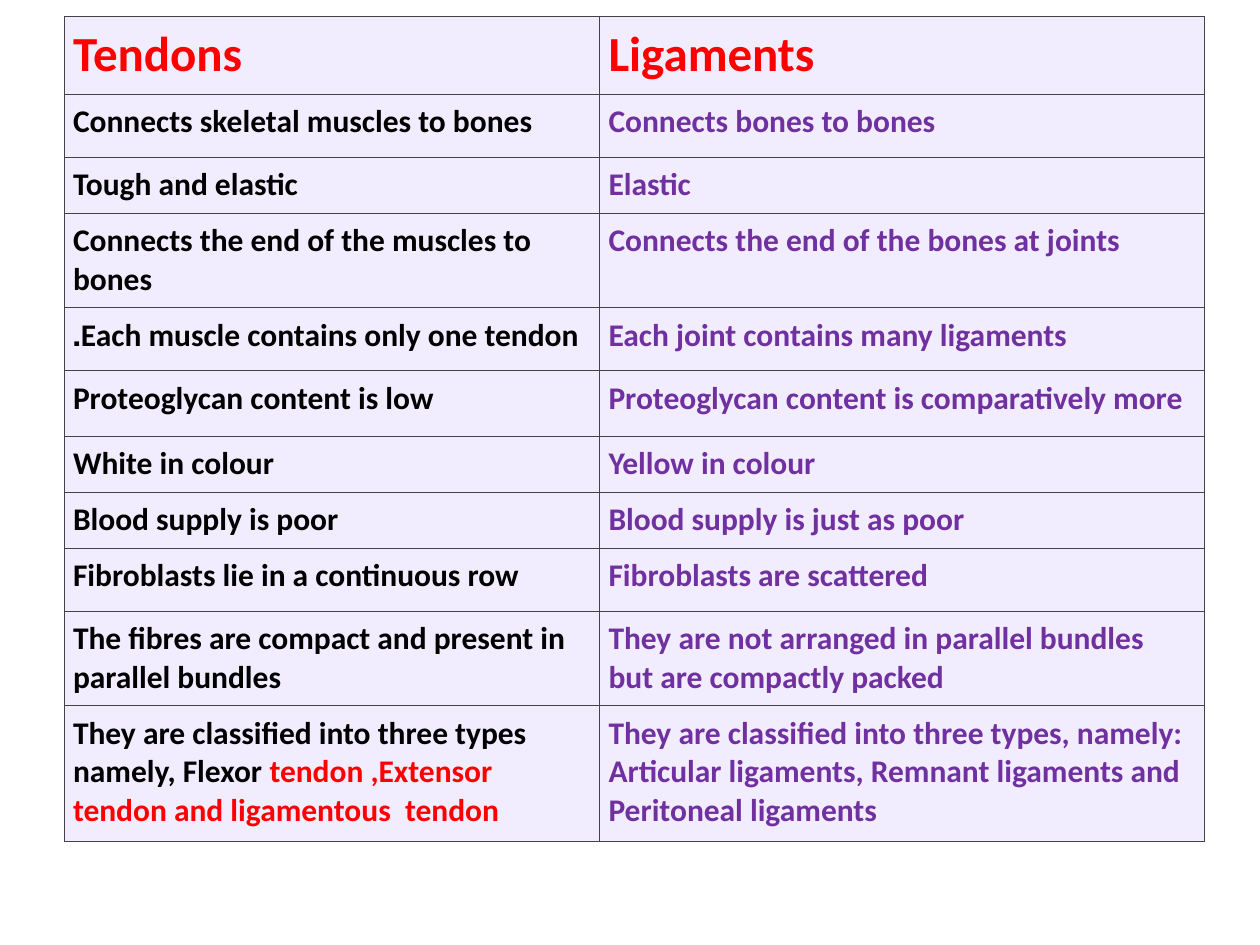
import pptx
import pptx.util
import pptx.dml.color
import pptx.enum.text
import pptx.oxml
import pptx.oxml.ns

Inches = pptx.util.Inches

COLORS = {
    "red": "FF0000",
    "black": "000000",
    "purple": "7030A0",
    "cell": "F1EDFF",
    "border": "444444",
}
FONT = "Calibri"

# Content: heading, then one (tendon, ligament) pair per row
HEADINGS = ("Tendons", "Ligaments")
COMPARISONS = [
    ("Connects skeletal muscles to bones", "Connects bones to bones"),
    ("Tough and elastic", "Elastic"),
    ("Connects the end of the muscles to bones", "Connects the end of the bones at joints"),
    ("Each muscle contains only one tendon.", "Each joint contains many ligaments"),
    ("Proteoglycan content is low", "Proteoglycan content is comparatively more"),
    ("White in colour", "Yellow in colour"),
    ("Blood supply is poor", "Blood supply is just as poor"),
    ("Fibroblasts lie in a continuous row", "Fibroblasts are scattered"),
    ("The fibres are compact and present in parallel bundles",
     "They are not arranged in parallel bundles but are compactly packed"),
]
# The last row reads left to right: paragraphs made of (text, color) runs
TENDON_TYPES = [
    [("They are classified into three types", "black")],
    [("namely, Flexor ", "black"),
     ("tendon ,Extensor tendon and ligamentous  tendon", "red")],
]
LIGAMENT_TYPES = [
    [("They are classified into three types, namely: Articular ligaments, "
      "Remnant ligaments and  Peritoneal ligaments", "purple")],
]

# Layout in inches
LEFT, TOP, WIDTH, HEIGHT = 0.51, 0.13, 9.06, 6.51
COLUMN_WIDTHS = [4.25, 4.8]
ROW_HEIGHTS = [0.32, 0.5, 0.32, 0.52, 0.5, 0.52, 0.32, 0.32, 0.5, 0.69, 1.08]
MARGIN = 0.07


def rgb(name):
    return pptx.dml.color.RGBColor.from_string(COLORS[name])


def add_borders(cell):
    properties = cell._tc.get_or_add_tcPr()
    for position, side in enumerate(("lnL", "lnR", "lnT", "lnB")):
        properties.insert(position, pptx.oxml.parse_xml(
            f'<a:{side} {pptx.oxml.ns.nsdecls("a")} w="{pptx.util.Pt(0.38)}">'
            f'<a:solidFill><a:srgbClr val="{COLORS["border"]}"/></a:solidFill>'
            f'</a:{side}>'))


def fill_cell(cell, paragraphs, size, right_to_left):
    cell.fill.solid()
    cell.fill.fore_color.rgb = rgb("cell")
    cell.margin_left = cell.margin_right = Inches(MARGIN)
    cell.margin_top = cell.margin_bottom = Inches(MARGIN)
    add_borders(cell)
    frame = cell.text_frame
    for index, runs in enumerate(paragraphs):
        paragraph = frame.add_paragraph() if index else frame.paragraphs[0]
        paragraph.alignment = pptx.enum.text.PP_ALIGN.LEFT
        if right_to_left:
            paragraph._p.get_or_add_pPr().set("rtl", "1")
        for text, color in runs:
            run = paragraph.add_run()
            run.text = text
            run.font.name = FONT
            run.font.size = pptx.util.Pt(size)
            run.font.bold = True
            run.font.color.rgb = rgb(color)


presentation = pptx.Presentation()
presentation.slide_width = Inches(10)
presentation.slide_height = Inches(7.5)
slide = presentation.slides.add_slide(presentation.slide_layouts[6])

# Table grid
table_frame = slide.shapes.add_table(
    len(ROW_HEIGHTS), len(COLUMN_WIDTHS),
    Inches(LEFT), Inches(TOP), Inches(WIDTH), Inches(HEIGHT))
table = table_frame.table
table.first_row = table.horz_banding = False
for column, width in zip(table.columns, COLUMN_WIDTHS):
    column.width = Inches(width)
for row, height in zip(table.rows, ROW_HEIGHTS):
    row.height = Inches(height)
table_frame.width, table_frame.height = Inches(WIDTH), Inches(HEIGHT)

# Table text
rows = [([[[(text, "red")]] for text in HEADINGS], 28, True)]
for tendon, ligament in COMPARISONS:
    rows.append(([[[(tendon, "black")]], [[(ligament, "purple")]]], 18, True))
rows.append(([TENDON_TYPES, LIGAMENT_TYPES], 18, False))

for row, (contents, size, right_to_left) in zip(table.rows, rows):
    for cell, paragraphs in zip(row.cells, contents):
        fill_cell(cell, paragraphs, size, right_to_left)

presentation.save("out.pptx")
